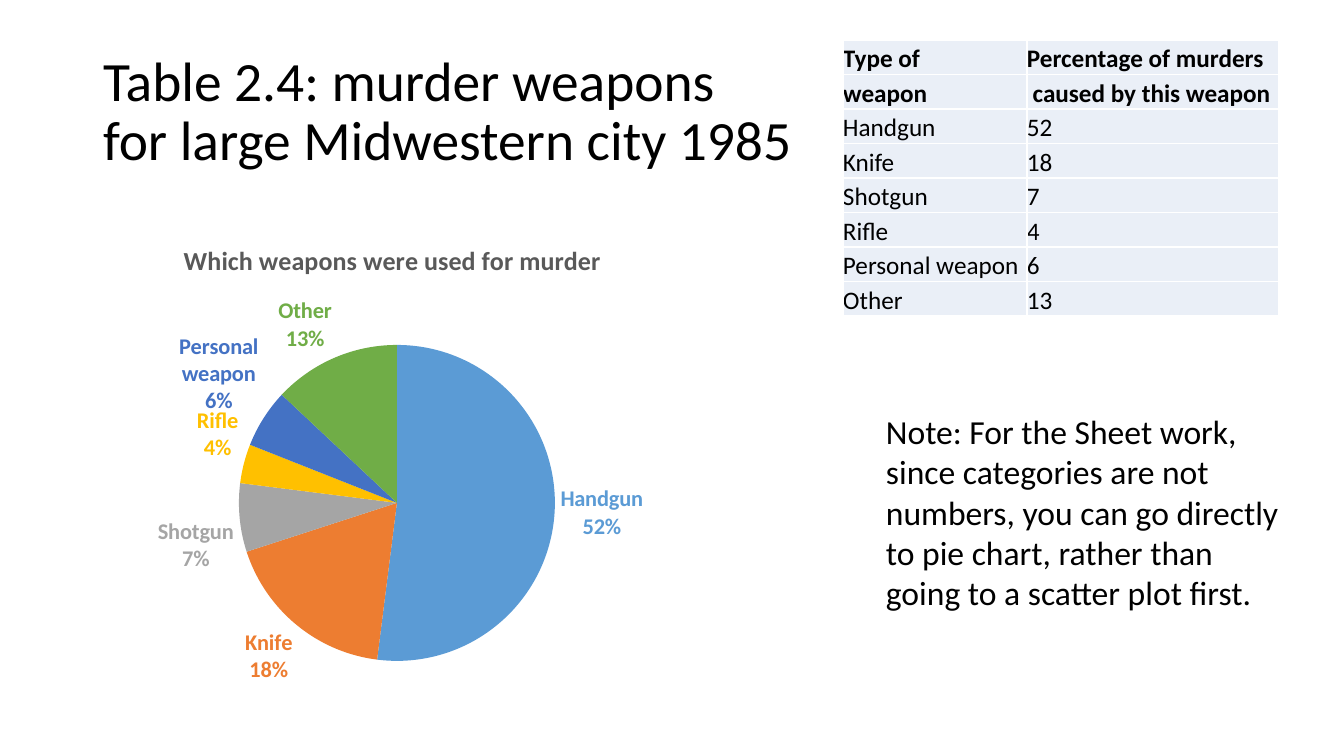
"""Build the murder weapons slide with a pie chart, a table and a note."""
import pptx
import pptx.chart.data
import pptx.dml.color
import pptx.enum.chart
import pptx.enum.text
import pptx.oxml
import pptx.oxml.ns
import pptx.util

RGB = pptx.dml.color.RGBColor
BLACK = RGB(0, 0, 0)
GRAY = RGB(0x59, 0x59, 0x59)
CELL_FILL = RGB(0xEA, 0xEF, 0xF7)
FONT = "Calibri"
PX = 914400 / 100.8

TITLE = "Table 2.4: murder weapons\vfor large Midwestern city 1985"
CHART_TITLE = "Which weapons were used for murder"
NOTE = ("Note: For the Sheet work, since categories are not numbers, you can go "
        "directly to pie chart, rather than going to a scatter plot first.")
HEADER = [("Type of", "Percentage of murders"), ("weapon", " caused by this weapon")]
WEAPONS = [
    ("Handgun", 52, RGB(0x5B, 0x9B, 0xD5)),
    ("Knife", 18, RGB(0xED, 0x7D, 0x31)),
    ("Shotgun", 7, RGB(0xA5, 0xA5, 0xA5)),
    ("Rifle", 4, RGB(0xFF, 0xC0, 0x00)),
    ("Personal weapon", 6, RGB(0x44, 0x72, 0xC4)),
    ("Other", 13, RGB(0x70, 0xAD, 0x47)),
]

TITLE_BOX = (93, 40, 750, 146)
TABLE_BOX = (843, 40, 436, 276)
COLUMN_WIDTHS = (184, 252)
CHART_BOX = (17, 214, 766, 500)
PIE_BOX = (239, 345, 316, 316)
CHART_TITLE_AT = (179, 237)
NOTE_BOX = (876, 406, 420, 214)


def emu(*lengths):
    return [round(length * PX) for length in lengths]


def set_font(font, size, color=BLACK, bold=False):
    font.name, font.size, font.bold = FONT, pptx.util.Pt(size), bold
    font.color.rgb = color


def fill_text(frame, text, size, bold=False):
    frame.text = text
    frame.word_wrap = True
    for span in frame.paragraphs[0].runs:
        set_font(span.font, size, bold=bold)


def add_borders(cell):
    properties = cell._tc.get_or_add_tcPr()
    for index, side in enumerate("LRTB"):
        properties.insert(index, pptx.oxml.parse_xml(
            f'<a:ln{side} {pptx.oxml.ns.nsdecls("a")} w="12700"><a:solidFill>'
            f'<a:srgbClr val="FFFFFF"/></a:solidFill></a:ln{side}>'))


def add_weapon_table(page):
    rows = HEADER + [(name, str(share)) for name, share, _ in WEAPONS]
    table = page.shapes.add_table(len(rows), 2, *emu(*TABLE_BOX)).table
    table.first_row = table.horz_banding = False
    for column, width in zip(table.columns, emu(*COLUMN_WIDTHS)):
        column.width = width
    for row_index, row in enumerate(rows):
        table.rows[row_index].height = emu(TABLE_BOX[3] / len(rows))[0]
        for column_index, text in enumerate(row):
            cell = table.cell(row_index, column_index)
            cell.margin_left = cell.margin_right = 0
            cell.margin_top = cell.margin_bottom = 0
            cell.vertical_anchor = pptx.enum.text.MSO_ANCHOR.BOTTOM
            cell.fill.solid()
            cell.fill.fore_color.rgb = CELL_FILL
            fill_text(cell.text_frame, text, 18, bold=row_index < len(HEADER))
            add_borders(cell)


def place(parent, box, target=""):
    left, top, width, height = CHART_BOX
    values = [(box[0] - left) / width, (box[1] - top) / height]
    values += [length / whole for length, whole in zip(box[2:], (width, height))]
    modes = "".join(f'<c:{axis}Mode val="edge"/>' for axis in "xy")
    sizes = "".join(f'<c:{tag} val="{value:.4f}"/>' for tag, value in zip("xywh", values))
    for old in parent.findall(pptx.oxml.ns.qn("c:layout")):
        parent.remove(old)
    layout = pptx.oxml.parse_xml(
        f'<c:layout {pptx.oxml.ns.nsdecls("c")}><c:manualLayout>{target}{modes}{sizes}'
        '</c:manualLayout></c:layout>')
    text = parent.find(pptx.oxml.ns.qn("c:tx"))
    parent.insert(0 if text is None else 1, layout)


def show_category_and_percent(label):
    for tag, shown in (("showVal", "0"), ("showCatName", "1"), ("showPercent", "1")):
        label.find(pptx.oxml.ns.qn(f"c:{tag}")).set("val", shown)
    separator = pptx.oxml.parse_xml(
        f'<c:separator {pptx.oxml.ns.nsdecls("c")}>\n</c:separator>')
    last = label.find(pptx.oxml.ns.qn("c:showBubbleSize"))
    if last is None:
        last = label.find(pptx.oxml.ns.qn("c:showPercent"))
    last.addnext(separator)


def add_weapon_chart(page):
    data = pptx.chart.data.CategoryChartData()
    data.categories = [name for name, _, _ in WEAPONS]
    data.add_series("Series 1", [share for _, share, _ in WEAPONS])
    chart = page.shapes.add_chart(
        pptx.enum.chart.XL_CHART_TYPE.PIE, *emu(*CHART_BOX), data).chart
    set_font(chart.font, 16)
    chart.has_legend = False
    chart.has_title = True
    chart.chart_title.text_frame.text = CHART_TITLE
    title_span = chart.chart_title.text_frame.paragraphs[0].runs[0]
    set_font(title_span.font, 18.6, GRAY, True)
    plot = chart.plots[0]
    plot.vary_by_categories = True
    outside = pptx.enum.chart.XL_LABEL_POSITION.OUTSIDE_END
    series = plot.series[0]
    series.data_labels.position = outside
    for index, (_, _, color) in enumerate(WEAPONS):
        point = series.points[index]
        point.format.fill.solid()
        point.format.fill.fore_color.rgb = color
        set_font(point.data_label.font, 16, color, True)
        point.data_label.position = outside
    for tag in ("c:dLbl", "c:dLbls"):
        for label in chart.element.iter(pptx.oxml.ns.qn(tag)):
            show_category_and_percent(label)
    place(chart.chart_title.element, CHART_TITLE_AT)
    plot_area = next(chart.element.iter(pptx.oxml.ns.qn("c:plotArea")))
    place(plot_area, PIE_BOX, '<c:layoutTarget val="inner"/>')


def main():
    deck = pptx.Presentation()
    deck.slide_width, deck.slide_height = emu(1344, 756)
    page = deck.slides.add_slide(deck.slide_layouts[5])
    title = page.shapes.title
    title.left, title.top, title.width, title.height = emu(*TITLE_BOX)
    fill_text(title.text_frame, TITLE, 39.6)
    title.text_frame.vertical_anchor = pptx.enum.text.MSO_ANCHOR.MIDDLE
    para = title.text_frame.paragraphs[0]
    para.alignment = pptx.enum.text.PP_ALIGN.LEFT
    para.line_spacing = 0.9
    add_weapon_table(page)
    add_weapon_chart(page)
    note = page.shapes.add_textbox(*emu(*NOTE_BOX))
    fill_text(note.text_frame, NOTE, 24)
    deck.save("out.pptx")


if __name__ == "__main__":
    main()
